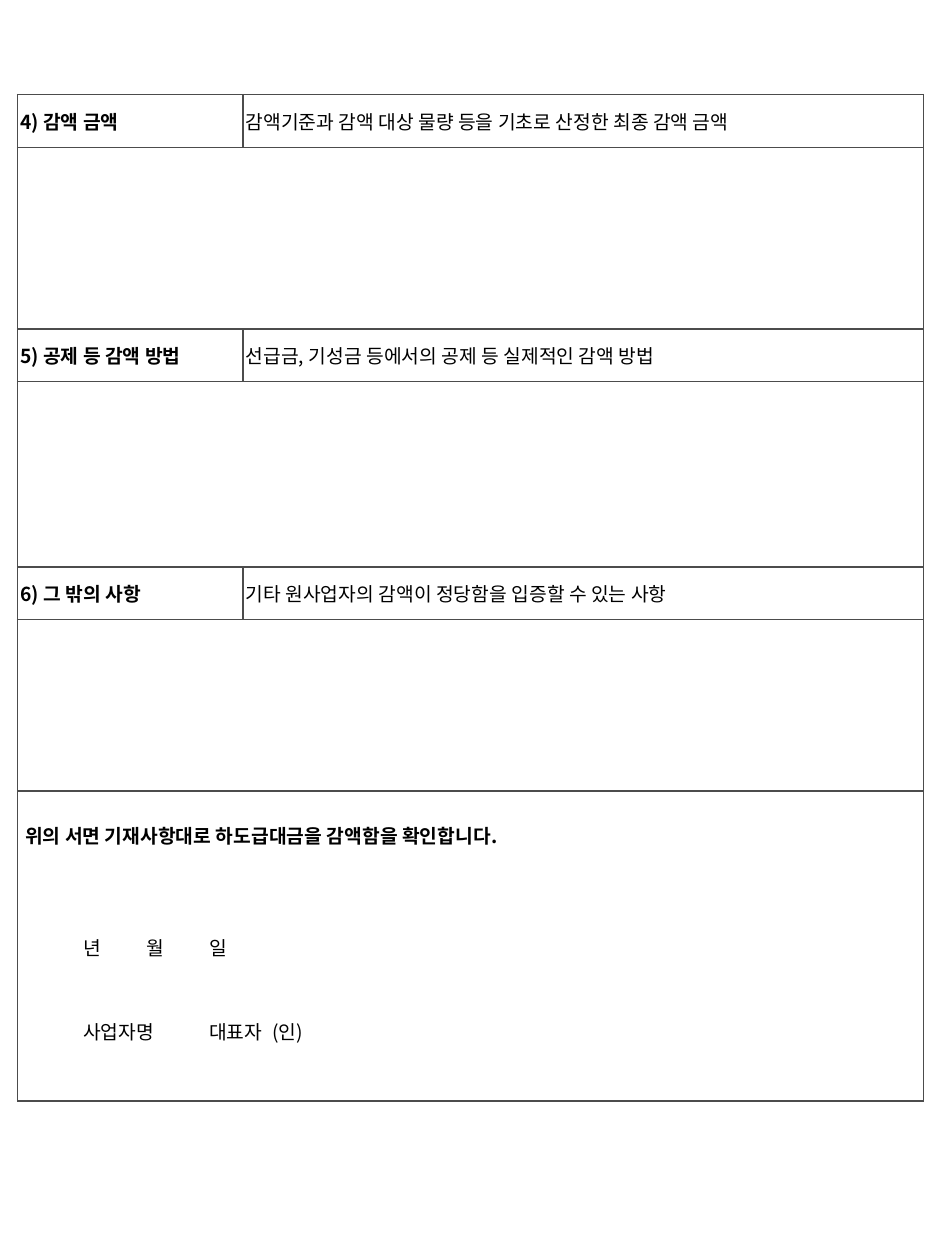
from dataclasses import dataclass

from lxml.etree import SubElement
from pptx import Presentation
from pptx.dml.color import RGBColor
from pptx.enum.text import MSO_ANCHOR as Anchor
from pptx.oxml import parse_xml
from pptx.oxml.ns import nsdecls, qn
from pptx.util import Inches, Pt

BLACK = RGBColor(0x00, 0x00, 0x00)
WHITE = RGBColor(0xFF, 0xFF, 0xFF)
BORDER = RGBColor(0x4C, 0x4C, 0x4C)
FONT = "Noto Sans CJK KR"
FONT_SIZE = 11
LINE_HEIGHT = 15.93
COLUMNS = 8
LABEL_COLUMNS = 2
FIRST_COLUMN, COLUMN = 0.89, 0.9
LEFT, TOP = 0.14, 0.75
HEADING_HEIGHT, CLOSING_HEIGHT = 0.42, 2.46


@dataclass(frozen=True)
class Section:
    label: str
    description: str
    answer_height: float


@dataclass(frozen=True)
class ClosingLine:
    text: str
    lines_before: int
    bold: bool = False
    indent: float = 0
    tabs: tuple[float, ...] = ()


SECTIONS = (
    Section("4) 감액 금액", "감액기준과 감액 대상 물량 등을 기초로 산정한 최종 감액 금액", 1.44),
    Section("5) 공제 등 감액 방법", "선급금, 기성금 등에서의 공제 등 실제적인 감액 방법", 1.47),
    Section("6) 그 밖의 사항", "기타 원사업자의 감액이 정당함을 입증할 수 있는 사항", 1.36),
)
CLOSING = (
    ClosingLine("위의 서면 기재사항대로 하도급대금을 감액함을 확인합니다.", 0, bold=True, indent=0.04),
    ClosingLine("\t년\t월\t일", 3, tabs=(3.24, 3.51, 3.78)),
    ClosingLine("\t사업자명\t대표자\t(인)", 2, tabs=(1.96, 3.85, 4.88)),
)


def write(para, text: str, *, bold: bool = False, before: float = 0,
          indent: float = 0, tabs: tuple[float, ...] = ()) -> None:
    properties = para._p.get_or_add_pPr()
    properties.set("marL", str(Inches(indent)))
    properties.set("indent", "0")
    if before:
        para.space_before = Pt(before)
    if tabs:
        tab_list = SubElement(properties, qn("a:tabLst"))
        for position in tabs:
            SubElement(tab_list, qn("a:tab"), pos=str(Inches(position)), algn="l")
    span = para.add_run()
    span.text = text
    font = span.font
    font.name, font.size, font.bold = FONT, Pt(FONT_SIZE), bold
    font.color.rgb = BLACK
    SubElement(span._r.get_or_add_rPr(), qn("a:ea"), typeface=FONT)


def style_cell(cell) -> None:
    cell.margin_left = cell.margin_right = Inches(0.02)
    cell.margin_top = cell.margin_bottom = Inches(0.01)
    cell.vertical_anchor = Anchor.MIDDLE
    cell.fill.solid()
    cell.fill.fore_color.rgb = WHITE
    properties = cell._tc.get_or_add_tcPr()
    for index, side in enumerate("LRTB"):
        properties.insert(index, parse_xml(
            f'<a:ln{side} {nsdecls("a")} w="{Pt(1)}"><a:solidFill>'
            f'<a:srgbClr val="{BORDER}"/></a:solidFill></a:ln{side}>'))


def merge(table, row: int, first: int, last: int):
    cell = table.cell(row, first)
    cell.merge(table.cell(row, last))
    return cell


def add_form(page) -> None:
    heights = [height for section in SECTIONS
               for height in (HEADING_HEIGHT, section.answer_height)]
    heights.append(CLOSING_HEIGHT)
    width = FIRST_COLUMN + COLUMN * (COLUMNS - 1)
    table = page.shapes.add_table(
        len(heights), COLUMNS, Inches(LEFT), Inches(TOP),
        Inches(width), Inches(sum(heights))).table
    table.first_row = table.horz_banding = False
    for index, column in enumerate(table.columns):
        column.width = Inches(COLUMN if index else FIRST_COLUMN)
    for row, height in zip(table.rows, heights):
        row.height = Inches(height)
    for cell in table.iter_cells():
        style_cell(cell)

    for index, section in enumerate(SECTIONS):
        row = 2 * index
        label = merge(table, row, 0, LABEL_COLUMNS - 1)
        description = merge(table, row, LABEL_COLUMNS, COLUMNS - 1)
        merge(table, row + 1, 0, COLUMNS - 1)
        write(label.text_frame.paragraphs[0], section.label, bold=True)
        write(description.text_frame.paragraphs[0], section.description)

    closing = merge(table, len(heights) - 1, 0, COLUMNS - 1)
    closing.vertical_anchor = Anchor.TOP
    closing.margin_top = Inches(0.24)
    frame = closing.text_frame
    for index, line in enumerate(CLOSING):
        para = frame.add_paragraph() if index else frame.paragraphs[0]
        write(para, line.text, bold=line.bold, indent=line.indent,
              before=line.lines_before * LINE_HEIGHT, tabs=line.tabs)


def main() -> None:
    deck = Presentation()
    deck.slide_width, deck.slide_height = Inches(7.5), Inches(10)
    page = deck.slides.add_slide(deck.slide_layouts[6])
    add_form(page)
    deck.save("out.pptx")


if __name__ == "__main__":
    main()
